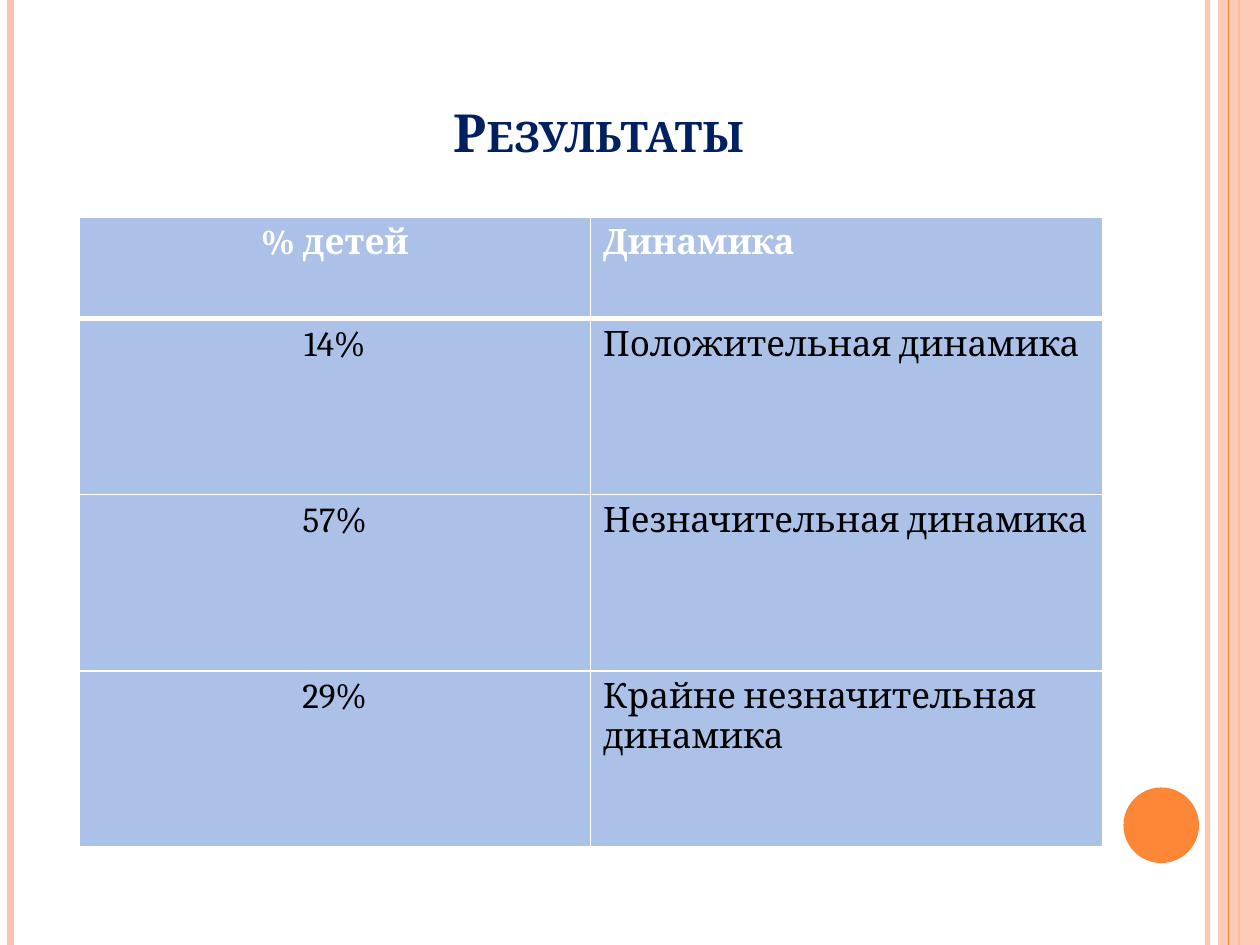
from dataclasses import dataclass

from lxml.etree import SubElement
from pptx import Presentation
from pptx.dml.color import RGBColor
from pptx.enum.shapes import MSO_CONNECTOR, MSO_SHAPE
from pptx.enum.text import MSO_ANCHOR, PP_ALIGN
from pptx.oxml import parse_xml
from pptx.oxml.ns import nsdecls, qn
from pptx.util import Pt


@dataclass(frozen=True)
class Theme:
    font: str = "Cambria"
    title_size: int = 30
    body_size: int = 20
    title: str = "002060"
    header: str = "FFFFFF"
    body: str = "000000"
    cell: str = "ACC1E8"
    border: str = "FFFFFF"
    accent: str = "FE8637"
    pale: str = "FEC3AE"


THEME = Theme()
WIDTH, HEIGHT = 720, 540
ROWS = [
    ("% детей", "Динамика"),
    ("14%", "Положительная динамика"),
    ("57%", "Незначительная динамика"),
    ("29%", "Крайне незначительная динамика"),
]


def write(tf, text, size=THEME.body_size, color=THEME.body, bold=False,
          align=PP_ALIGN.LEFT, small_caps=False):
    tf.word_wrap = True
    p = tf.paragraphs[0]
    p.alignment = align
    r = p.add_run()
    r.text = text
    r.font.name, r.font.size, r.font.bold = THEME.font, Pt(size), bold
    r.font.color.rgb = RGBColor.from_string(color)
    if small_caps:
        r.font._element.set("cap", "small")


def set_alpha(fill_parent, percent):
    color = next(fill_parent.iter(qn("a:srgbClr")))
    SubElement(color, qn("a:alpha")).set("val", str(percent * 1000))


def add_rule(s, x, box, color, width, alpha=100):
    left, top, _, height = box
    line = s.shapes.add_connector(MSO_CONNECTOR.STRAIGHT, Pt(left + x), Pt(top),
                                  Pt(left + x), Pt(top + height))
    line.line.color.rgb = RGBColor.from_string(color)
    line.line.width = Pt(width)
    if alpha < 100:
        set_alpha(line._element.spPr, alpha)
    SubElement(line._element.spPr, qn("a:effectLst"))


def add_solid(s, kind, box, color, alpha=100):
    sp = s.shapes.add_shape(kind, *map(Pt, box))
    sp.shadow.inherit = False
    sp.fill.solid()
    sp.fill.fore_color.rgb = RGBColor.from_string(color)
    sp.line.fill.background()
    if alpha < 100:
        set_alpha(sp._element.spPr, alpha)


def add_frame(s, box):
    """Edge stripes and the corner dot."""
    left, top, width, height = box
    add_rule(s, 690, box, THEME.pale, 3, alpha=93)
    add_rule(s, 6, box, THEME.pale, 4.5)
    add_rule(s, 708, box, THEME.accent, 1.5)
    add_solid(s, MSO_SHAPE.RECTANGLE, (left + width - 24, top, 24, height),
              THEME.pale, alpha=87)
    add_rule(s, 702, box, THEME.accent, 0.75)
    add_solid(s, MSO_SHAPE.OVAL, (left + 642, top + 450, 43.2, 43.2), THEME.accent)


def add_title(s, box, text):
    tf = s.shapes.add_textbox(*map(Pt, box)).text_frame
    tf.vertical_anchor = MSO_ANCHOR.BOTTOM
    write(tf, text, size=THEME.title_size, color=THEME.title, bold=True,
          align=PP_ALIGN.CENTER, small_caps=True)


def set_borders(cell, **widths):
    tc_pr = cell._tc.get_or_add_tcPr()
    for i, (side, width) in enumerate(widths.items()):
        tc_pr.insert(i, parse_xml(
            f'<a:ln{side} {nsdecls("a")} w="{Pt(width)}"><a:solidFill>'
            f'<a:srgbClr val="{THEME.border}"/></a:solidFill></a:ln{side}>'))


def add_results(s, box, rows, header_height):
    _, _, width, height = box
    table = s.shapes.add_table(len(rows), len(rows[0]), *map(Pt, box)).table
    row_height = (height - header_height) / (len(rows) - 1)
    for col in table.columns:
        col.width = Pt(width / len(rows[0]))
    for i, row in enumerate(rows):
        is_header = i == 0
        table.rows[i].height = Pt(header_height if is_header else row_height)
        for j, text in enumerate(row):
            cell = table.cell(i, j)
            cell.fill.solid()
            cell.fill.fore_color.rgb = RGBColor.from_string(THEME.cell)
            set_borders(cell, L=1, R=1, T=3 if i == 1 else 1, B=3 if is_header else 1)
            write(cell.text_frame, text, bold=is_header,
                  color=THEME.header if is_header else THEME.body,
                  align=PP_ALIGN.CENTER if j == 0 else PP_ALIGN.LEFT)


def main():
    prs = Presentation()
    prs.slide_width, prs.slide_height = Pt(WIDTH), Pt(HEIGHT)
    s = prs.slides.add_slide(prs.slide_layouts[6])
    add_frame(s, (0, 0, WIDTH, HEIGHT))
    add_title(s, (22.5, -22.5, 639, 119), "Результаты")
    add_results(s, (45, 124, 585, 360), ROWS, header_height=58)
    prs.save("out.pptx")


if __name__ == "__main__":
    main()
